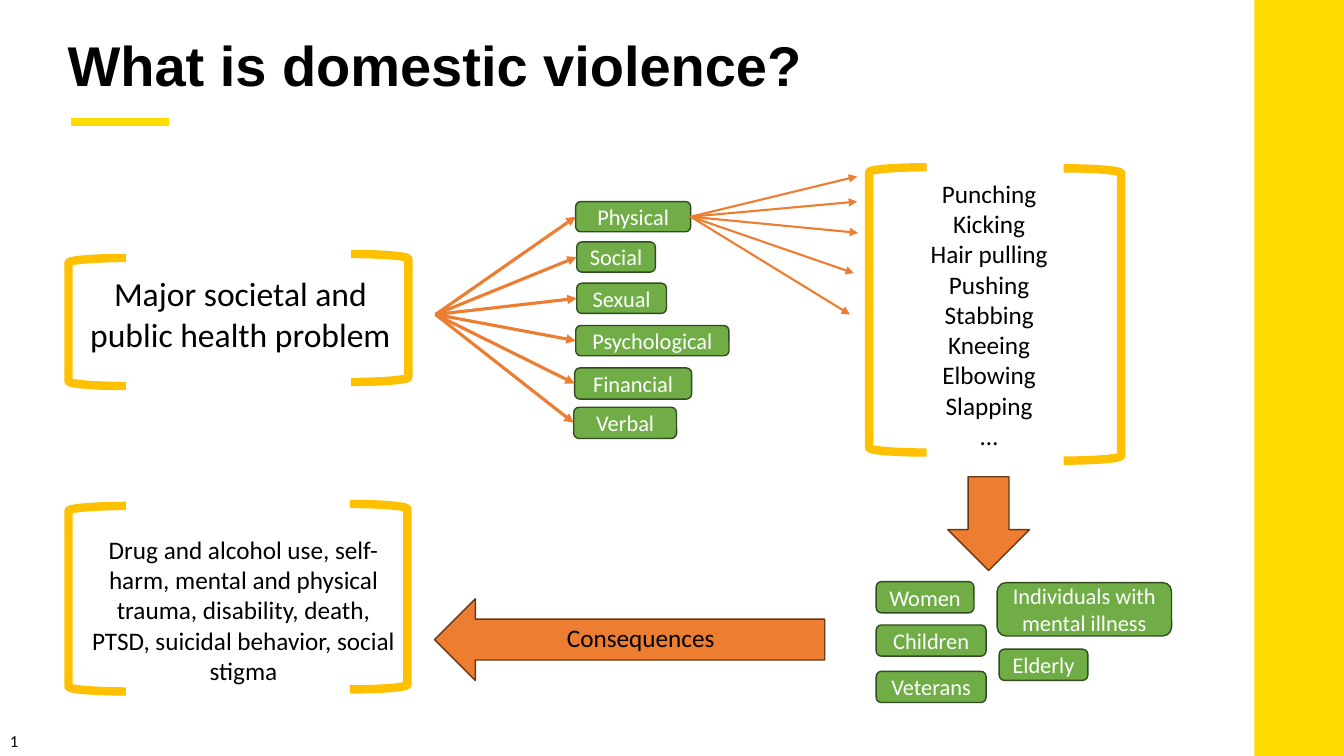
from lxml.etree import SubElement
from pptx import Presentation
from pptx.dml.color import RGBColor
from pptx.enum.shapes import MSO_CONNECTOR, MSO_SHAPE
from pptx.enum.text import MSO_ANCHOR, MSO_AUTO_SIZE, PP_ALIGN
from pptx.oxml.ns import qn
from pptx.util import Inches, Pt

YELLOW = "FFDC00"
GOLD = "FFC000"
ORANGE = "ED7D31"
GREEN = "70AD47"
BLACK = "000000"
WHITE = "FFFFFF"

ABUSE_TYPES = [
    ("Physical", 5.71, 2.0, 1.14, 0.3),
    ("Social", 5.72, 2.4, 0.78, 0.3),
    ("Sexual", 5.72, 2.81, 0.89, 0.3),
    ("Psychological", 5.71, 3.23, 1.52, 0.3),
    ("Financial", 5.7, 3.65, 1.16, 0.31),
    ("Verbal", 5.69, 4.04, 1.02, 0.31),
]
VICTIM_GROUPS = [
    ("Women", 8.69, 5.77, 0.97, 0.31),
    ("Children", 8.69, 6.2, 1.09, 0.31),
    ("Veterans", 8.69, 6.66, 1.09, 0.31),
    ("Elderly", 9.91, 6.44, 0.88, 0.31),
    ("Individuals with mental illness", 9.89, 5.78, 1.73, 0.53),
]
PHYSICAL_ACTS = ["Punching", "Kicking", "Hair pulling", "Pushing", "Stabbing",
                 "Kneeing", "Elbowing", "Slapping", "…"]
ACT_ARROW_ENDS = [(8.5, 1.75), (8.5, 2.0), (8.51, 2.31), (8.47, 2.71), (8.43, 3.12)]
LEFT_BRACKETS = [(0.68, 2.56, 1.27), (8.62, 1.66, 2.83), (0.68, 5.02, 1.84)]
RIGHT_BRACKETS = [(3.48, 2.52, 1.27), (10.55, 1.67, 2.9), (3.47, 5.0, 1.84)]


def color(value):
    return RGBColor.from_string(value)


def style_paragraph(paragraph, size, font_color, align, name="Calibri", bold=False):
    paragraph.alignment = align
    font = paragraph.font
    font.name = name
    font.size = Pt(size)
    font.bold = bold
    font.color.rgb = color(font_color)


def add_shape(slide, kind, box, fill=None, line=None, line_width=1):
    shape = slide.shapes.add_shape(kind, *map(Inches, box))
    shape.shadow.inherit = False
    if fill:
        shape.fill.solid()
        shape.fill.fore_color.rgb = color(fill)
    else:
        shape.fill.background()
    if line:
        shape.line.color.rgb = color(line)
        shape.line.width = Pt(line_width)
    else:
        shape.line.fill.background()
    return shape


def add_label(slide, text, *box):
    shape = add_shape(slide, MSO_SHAPE.ROUNDED_RECTANGLE, box, GREEN, "314C1F")
    frame = shape.text_frame
    frame.word_wrap = True
    frame.vertical_anchor = MSO_ANCHOR.MIDDLE
    frame.text = text
    style_paragraph(frame.paragraphs[0], 16, WHITE, PP_ALIGN.CENTER)


def add_line(slide, start, end, line_color, width, arrow=False):
    connector = slide.shapes.add_connector(
        MSO_CONNECTOR.STRAIGHT, *map(Inches, (*start, *end)))
    connector.line.color.rgb = color(line_color)
    connector.line.width = Pt(width)
    if arrow:
        SubElement(connector.line._get_or_add_ln(), qn("a:tailEnd"), type="triangle")
    SubElement(connector._element.spPr, qn("a:effectLst"))


def add_text(slide, lines, box, size, align=PP_ALIGN.CENTER, wrap=True):
    frame = slide.shapes.add_textbox(*map(Inches, box)).text_frame
    frame.word_wrap = wrap
    frame.auto_size = MSO_AUTO_SIZE.SHAPE_TO_FIT_TEXT
    frame.text = "\n".join(lines)
    for paragraph in frame.paragraphs:
        style_paragraph(paragraph, size, BLACK, align)


def set_title(slide, text):
    title = slide.shapes.title
    title.left, title.top = Inches(0.57), Inches(0.25)
    title.width, title.height = Inches(12.51), Inches(0.77)
    frame = title.text_frame
    frame.text = text
    frame.word_wrap = True
    frame.auto_size = MSO_AUTO_SIZE.NONE
    frame.vertical_anchor = MSO_ANCHOR.TOP
    style_paragraph(frame.paragraphs[0], 40, BLACK, PP_ALIGN.LEFT, "Arial", True)


def main():
    presentation = Presentation()
    presentation.slide_width = Inches(13.33)
    presentation.slide_height = Inches(7.5)
    slide = presentation.slides.add_slide(presentation.slide_layouts[5])

    add_shape(slide, MSO_SHAPE.RECTANGLE, (12.44, 0, 0.89, 7.5), YELLOW)
    set_title(slide, "What is domestic violence?")
    add_line(slide, (0.7, 1.21), (1.68, 1.21), YELLOW, 6)

    for text, left, top, width, height in ABUSE_TYPES:
        add_label(slide, text, left, top, width, height)
        add_line(slide, (4.32, 3.12), (left, top + height / 2), ORANGE, 2.25, True)
    for end in ACT_ARROW_ENDS:
        add_line(slide, (6.85, 2.15), end, ORANGE, 1.5, True)

    for kind, brackets in ((MSO_SHAPE.LEFT_BRACKET, LEFT_BRACKETS),
                           (MSO_SHAPE.RIGHT_BRACKET, RIGHT_BRACKETS)):
        for left, top, height in brackets:
            add_shape(slide, kind, (left, top, 0.57, height), None, GOLD, 6)

    add_text(slide, ["Major societal and", "public health problem"],
             (0.45, 2.66, 3.87, 0.91), 24)
    add_text(slide, PHYSICAL_ACTS, (9.12, 1.72, 1.38, 2.83), 18, wrap=False)

    for kind, box in ((MSO_SHAPE.DOWN_ARROW, (9.4, 4.73, 0.81, 0.93)),
                      (MSO_SHAPE.LEFT_ARROW, (4.31, 5.94, 3.87, 0.81))):
        add_shape(slide, kind, box, ORANGE, "683715")
    for group in VICTIM_GROUPS:
        add_label(slide, *group)

    add_text(slide, ["Consequences"], (4.42, 6.12, 3.87, 0.4), 18)
    add_text(slide, ["Drug and alcohol use, self-harm, mental and physical trauma, "
                     "disability, death, PTSD, suicidal behavior, social stigma"],
             (0.81, 5.25, 3.21, 1.62), 18)
    add_text(slide, ["1"], (0, 7.2, 0.29, 0.3), 12, PP_ALIGN.LEFT, False)

    presentation.save("out.pptx")


if __name__ == "__main__":
    main()
